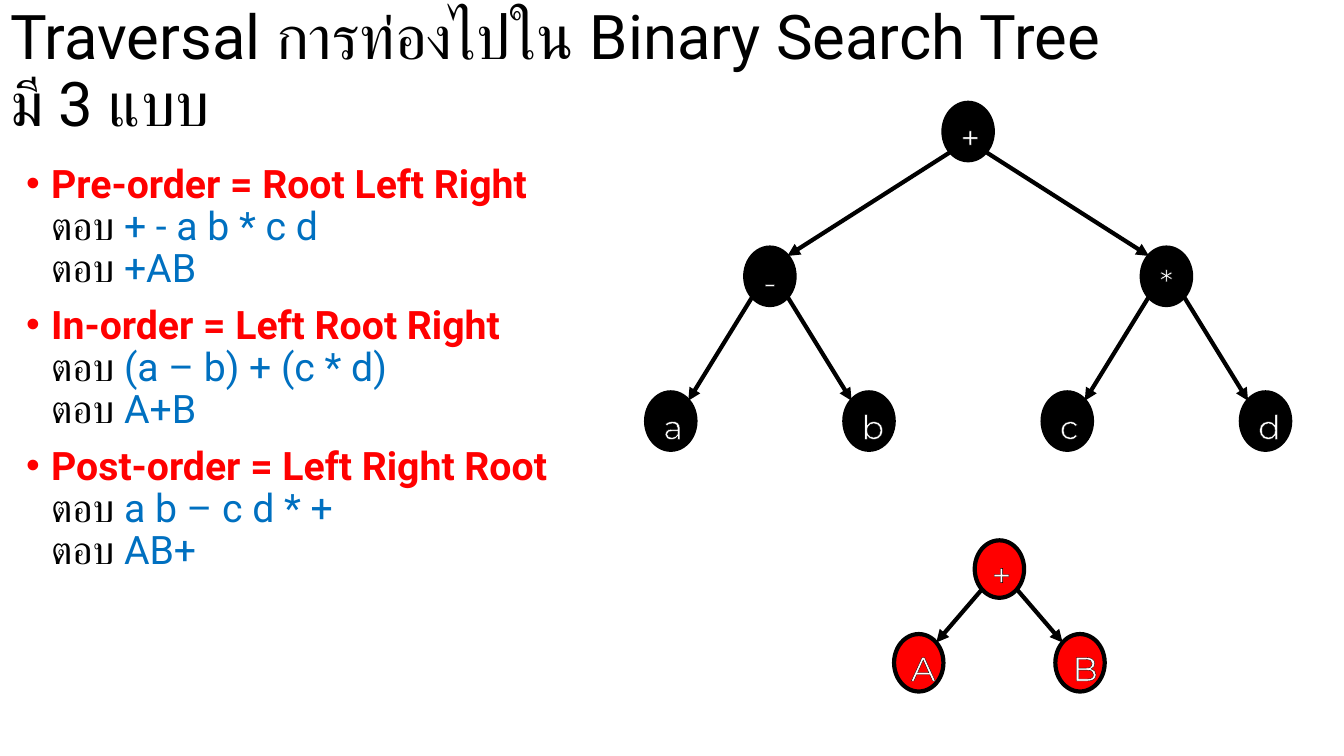
from dataclasses import dataclass
from math import sqrt

from lxml.etree import SubElement
from pptx import Presentation
from pptx.dml.color import RGBColor as Rgb
from pptx.enum.shapes import MSO_CONNECTOR as Connector, MSO_SHAPE as Preset
from pptx.enum.text import MSO_ANCHOR as Anchor, MSO_AUTO_SIZE as AutoSize, PP_ALIGN as Align
from pptx.oxml.ns import qn
from pptx.util import Inches, Pt


@dataclass(frozen=True)
class Theme:
    black: Rgb = Rgb(0, 0, 0)
    white: Rgb = Rgb(255, 255, 255)
    red: Rgb = Rgb(255, 0, 0)
    blue: Rgb = Rgb(0, 0x70, 0xC0)
    text_font: str = "Roboto"
    node_font: str = "Montserrat"
    title_size: int = 44
    body_size: int = 28
    node_size: int = 24
    stroke: int = 3
    outline: float = 0.75
    line_spacing: float = 0.9


class TraversalSlide:
    """Places elements on a grid of 40 columns by 40 rows."""

    NODE_COLS, NODE_ROWS = 1.47, 3.04

    def __init__(self, deck, theme):
        self.theme = theme
        self.col = deck.slide_width / 40
        self.row = deck.slide_height / 40
        self.slide = deck.slides.add_slide(deck.slide_layouts[5])
        self.shapes = self.slide.shapes

    def x(self, cols):
        return round(cols * self.col)

    def y(self, rows):
        return round(rows * self.row)

    def run(self, paragraph, text, size, color, font, bold=False):
        run = paragraph.add_run()
        run.text = text
        run.font.size, run.font.name, run.font.bold = Pt(size), font, bold
        run.font.color.rgb = color
        return run

    def title(self, text, cols, rows):
        heading = self.shapes.title
        heading.left, heading.top = 0, 0
        heading.width, heading.height = self.x(cols), self.y(rows)
        frame = heading.text_frame
        frame.word_wrap, frame.auto_size = True, AutoSize.NONE
        frame.vertical_anchor = Anchor.MIDDLE
        paragraph = frame.paragraphs[0]
        paragraph.alignment = Align.LEFT
        paragraph.line_spacing = self.theme.line_spacing
        self.run(paragraph, text, self.theme.title_size, self.theme.black, self.theme.text_font)

    def orders(self, entries, left, top, cols, rows, top_margin):
        """Bulleted traversal orders, each followed by its answers."""
        theme = self.theme
        box = self.shapes.add_textbox(self.x(left), self.y(top), self.x(cols), self.y(rows))
        frame = box.text_frame
        frame.word_wrap = True
        frame.margin_top = self.y(top_margin)
        for index, (rule, answers) in enumerate(entries):
            paragraph = frame.add_paragraph() if index else frame.paragraphs[0]
            paragraph.line_spacing = theme.line_spacing
            paragraph.space_before = Pt(10 if index else 0)
            self.bullet(paragraph)
            self.run(paragraph, rule, theme.body_size, theme.red, theme.text_font, bold=True)
            for answer in answers:
                paragraph.add_line_break()
                self.run(paragraph, "ตอบ ", theme.body_size, theme.black, theme.text_font)
                self.run(paragraph, answer, theme.body_size, theme.blue, theme.text_font)

    def bullet(self, paragraph):
        properties = paragraph._p.get_or_add_pPr()
        properties.set("marL", str(Inches(0.25)))
        properties.set("indent", str(-Inches(0.25)))
        SubElement(properties, qn("a:buFont")).set("typeface", "Arial")
        SubElement(properties, qn("a:buChar")).set("char", "•")

    def node(self, label, left, top, fill):
        theme = self.theme
        circle = self.shapes.add_shape(Preset.OVAL, self.x(left), self.y(top),
                                       self.x(self.NODE_COLS), self.y(self.NODE_ROWS))
        circle.shadow.inherit = False
        circle.fill.solid()
        circle.fill.fore_color.rgb = fill
        circle.line.color.rgb = theme.black
        circle.line.width = Pt(theme.stroke)
        frame = circle.text_frame
        frame.word_wrap, frame.vertical_anchor = True, Anchor.TOP
        paragraph = frame.paragraphs[0]
        paragraph.alignment = Align.CENTER
        run = self.run(paragraph, label, theme.node_size, theme.white, theme.node_font)
        self.outline(run)
        return circle

    def outline(self, run):
        properties = run._r.get_or_add_rPr()
        edge = SubElement(properties, qn("a:ln"))
        edge.set("w", str(Pt(self.theme.outline)))
        fill = SubElement(edge, qn("a:solidFill"))
        SubElement(fill, qn("a:srgbClr")).set("val", str(self.theme.black))
        properties.insert(0, edge)

    def branch(self, parent, child):
        """Arrow between the facing diagonal points of two circles."""
        side = 1 if child.left > parent.left else -1

        def rim(circle, across, down):
            reach = 1 / sqrt(2)
            return (round(circle.left + circle.width / 2 * (1 + across * reach)),
                    round(circle.top + circle.height / 2 * (1 + down * reach)))

        arrow = self.shapes.add_connector(Connector.STRAIGHT, *rim(parent, side, 1),
                                          *rim(child, -side, -1))
        arrow.line.color.rgb = self.theme.black
        arrow.line.width = Pt(self.theme.stroke)
        SubElement(arrow.line._get_or_add_ln(), qn("a:tailEnd")).set("type", "triangle")
        SubElement(arrow._element.spPr, qn("a:effectLst"))

    def tree(self, labels, left, top, col_step, row_step, fill):
        """Full binary tree from labels in level order; left is the first leaf's column."""
        height = len(labels).bit_length() - 1
        nodes = []
        for number, label in enumerate(labels, start=1):
            depth = number.bit_length() - 1
            place = number - 2 ** depth
            step = (2 * place + 1) * 2 ** (height - depth) - 1
            nodes.append(self.node(label, left + step * col_step, top + depth * row_step, fill))
        for index in range(1, len(nodes)):
            self.branch(nodes[(index - 1) // 2], nodes[index])


ORDERS = [
    ("Pre-order = Root Left Right", ["+ - a b * c d", "+AB"]),
    ("In-order = Left Root Right", ["(a – b) + (c * d)", "A+B"]),
    ("Post-order = Left Right Root", ["a b – c d * +", "AB+"]),
]


def main():
    deck = Presentation()
    deck.slide_width, deck.slide_height = Inches(13.33), Inches(7.5)
    theme = Theme()
    page = TraversalSlide(deck, theme)
    page.title("Traversal การท่องไปใน Binary Search Tree มี 3 แบบ", cols=34.5, rows=7.73)
    page.orders(ORDERS, left=0.48, top=5.44, cols=23.64, rows=32.9, top_margin=3.25)
    page.tree("+-*abcd", left=19.23, top=5.44, col_step=2.95, row_step=7.66, fill=theme.black)
    page.tree("+AB", left=26.61, top=28.59, col_step=2.4, row_step=4.96, fill=theme.red)
    deck.save("out.pptx")


if __name__ == "__main__":
    main()
